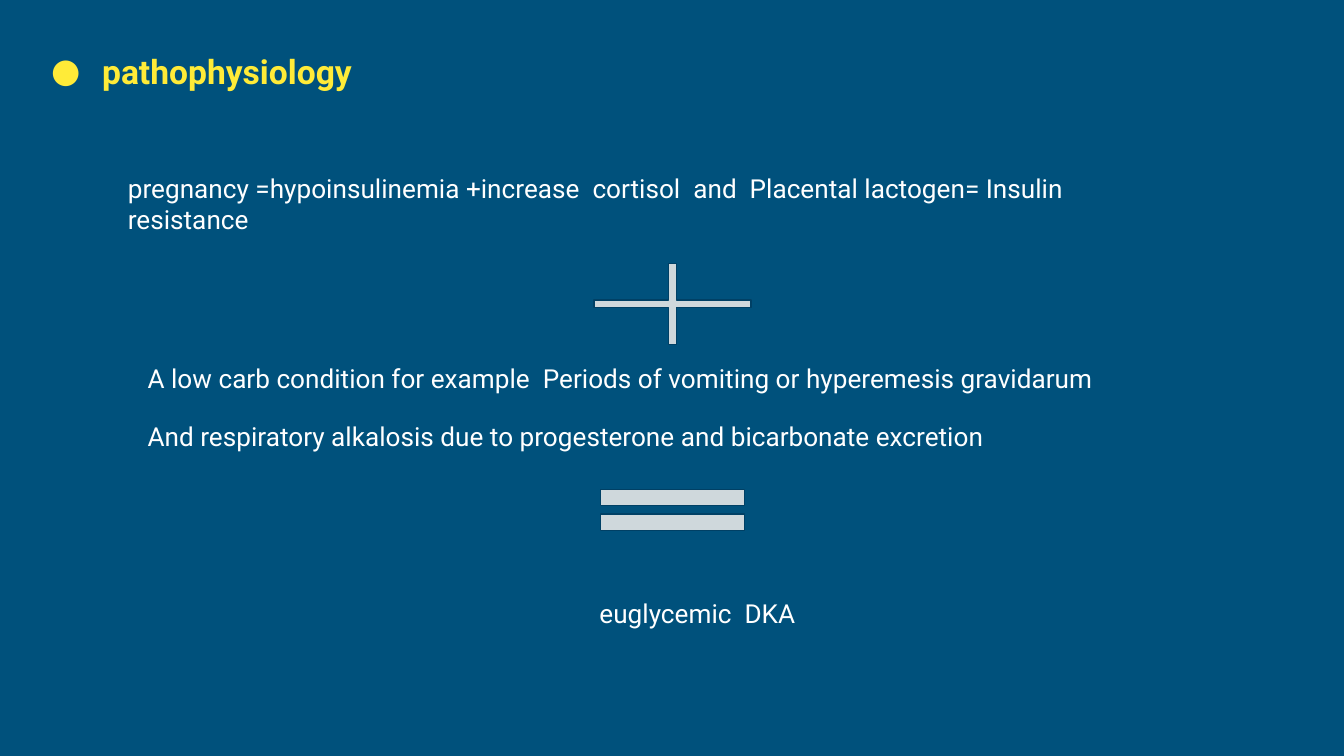
"""Build a slide on the pathophysiology of euglycemic DKA in pregnancy."""
from lxml.etree import SubElement
from pptx import Presentation
from pptx.dml.color import RGBColor
from pptx.enum.shapes import MSO_SHAPE
from pptx.enum.text import MSO_ANCHOR, MSO_AUTO_SIZE, PP_ALIGN
from pptx.oxml.ns import qn
from pptx.util import Inches, Pt

COLORS = {"background": "00517C", "title": "FFEB38", "text": "FFFFFF",
          "sign": "CFD8DC", "outline": "004065"}

deck = Presentation()
deck.slide_width = Inches(10)
deck.slide_height = deck.slide_width * 9 // 16
column, row = deck.slide_width / 100, deck.slide_height / 100
page = deck.slides.add_slide(deck.slide_layouts[5])
page.background.fill.solid()
page.background.fill.fore_color.rgb = RGBColor.from_string(COLORS["background"])


def place(shape, left, top, width, height):
    shape.left, shape.width = round(left * column), round(width * column)
    shape.top, shape.height = round(top * row), round(height * row)


def write(box, text, size, color, bold=False):
    frame = box.text_frame
    frame.word_wrap = True
    frame.auto_size = MSO_AUTO_SIZE.NONE
    frame.vertical_anchor = MSO_ANCHOR.TOP
    frame.margin_left = frame.margin_right = Inches(0.1)
    frame.margin_top = frame.margin_bottom = Inches(0.1)
    para = frame.paragraphs[0]
    para.text = text
    para.alignment = PP_ALIGN.LEFT
    para.font.name = "Roboto"
    para.font.size = Pt(size)
    para.font.bold = bold
    para.font.color.rgb = RGBColor.from_string(COLORS[color])
    return para


title = page.shapes.title
place(title, 1.6, 5, 80, 9)
heading = write(title, "pathophysiology", 18, "title", bold=True)
properties = heading._p.get_or_add_pPr()
properties.set("marL", str(Inches(0.5)))
properties.set("indent", str(Inches(-0.38)))
font_defaults = properties.find(qn("a:defRPr"))
bullet_color = SubElement(properties, qn("a:buClr"))
SubElement(bullet_color, qn("a:srgbClr"), val=COLORS["title"])
SubElement(properties, qn("a:buSzPts"), val="1800")
SubElement(properties, qn("a:buFont"), typeface="Roboto")
SubElement(properties, qn("a:buChar"), char="●")
properties.append(font_defaults)

statements = [
    (8.53, 21, 12, "pregnancy =hypoinsulinemia +increase  cortisol  and  "
                   "Placental lactogen= Insulin resistance"),
    (10, 46.15, 7.7, "A low carb condition for example  Periods of vomiting "
                     "or hyperemesis gravidarum"),
    (10, 53.85, 7.7, "And respiratory alkalosis due to progesterone "
                     "and bicarbonate excretion"),
    (43.62, 77.2, 7.7, "euglycemic  DKA"),
]
for left, top, height, text in statements:
    box = page.shapes.add_textbox(0, 0, 0, 0)
    place(box, left, top, 80, height)
    write(box, text, 14, "text")

signs = [
    (MSO_SHAPE.MATH_PLUS, 32.9, 15.9, 14.6, [0.07]),
    (MSO_SHAPE.MATH_EQUAL, 62.9, 14.6, 9.1, [0.24, 0.12]),
]
for kind, top, width, height, adjustments in signs:
    sign = page.shapes.add_shape(kind, 0, 0, 0, 0)
    place(sign, 50.03 - width / 2, top, width, height)
    for index, value in enumerate(adjustments):
        sign.adjustments[index] = value
    sign.shadow.inherit = False
    sign.fill.solid()
    sign.fill.fore_color.rgb = RGBColor.from_string(COLORS["sign"])
    sign.line.color.rgb = RGBColor.from_string(COLORS["outline"])
    sign.line.width = Pt(0.75)

deck.save("out.pptx")
